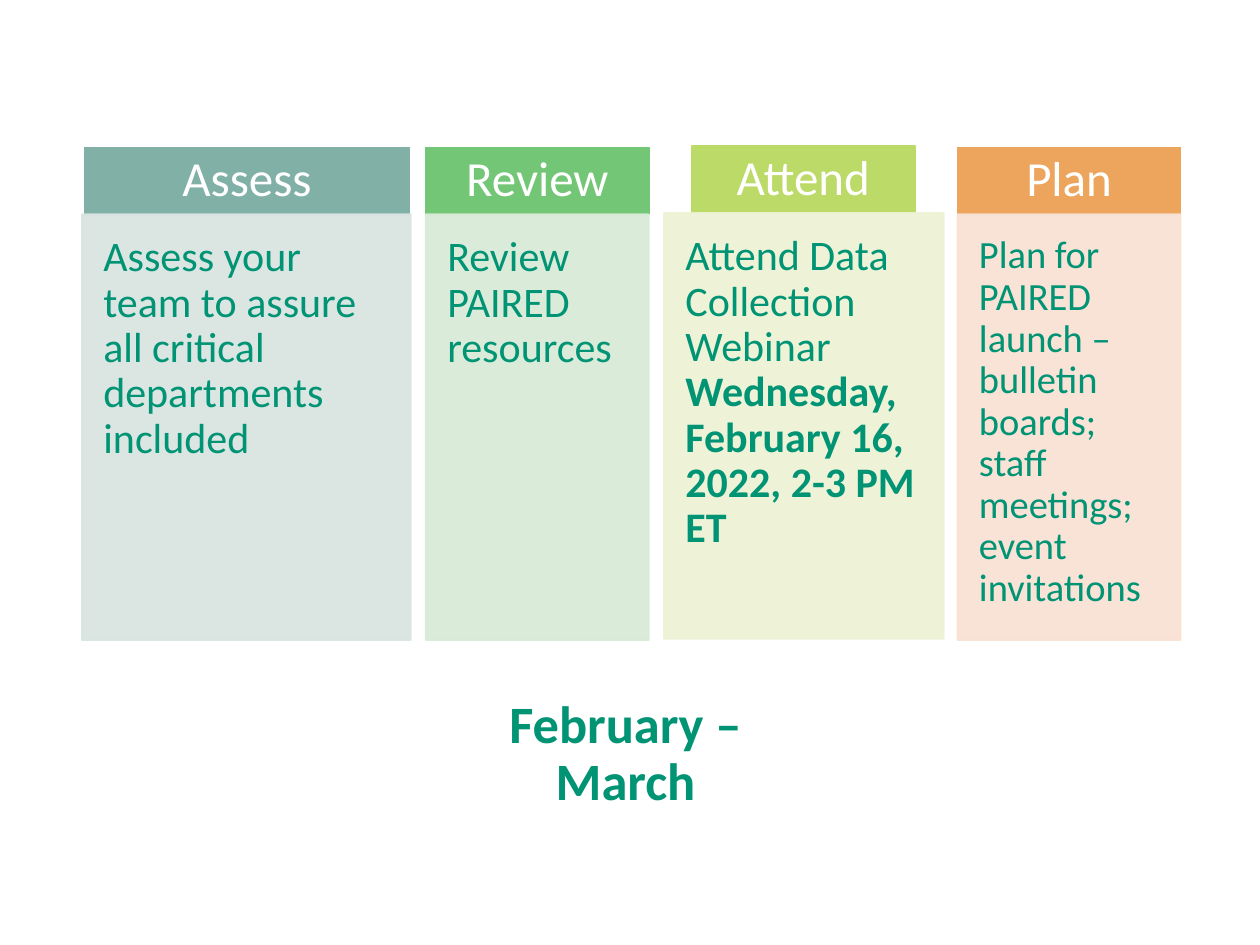
from dataclasses import dataclass

from lxml.etree import SubElement
from pptx import Presentation
from pptx.dml.color import RGBColor
from pptx.enum.shapes import MSO_SHAPE
from pptx.enum.text import MSO_ANCHOR, MSO_AUTO_SIZE, PP_ALIGN
from pptx.oxml.ns import qn
from pptx.slide import Slide
from pptx.util import Inches, Pt

WHITE = RGBColor(0xFF, 0xFF, 0xFF)
GREEN = RGBColor(0x00, 0x93, 0x74)
TEAL, PALE_TEAL = RGBColor(0x80, 0xB0, 0xA6), RGBColor(0xD8, 0xE4, 0xE1)
LEAF, PALE_LEAF = RGBColor(0x73, 0xC6, 0x75), RGBColor(0xD6, 0xEB, 0xD5)
LIME, PALE_LIME = RGBColor(0xBC, 0xDA, 0x67), RGBColor(0xED, 0xF2, 0xD3)
ORANGE, PALE_ORANGE = RGBColor(0xED, 0xA5, 0x5D), RGBColor(0xF8, 0xE1, 0xD2)

COLUMNS, ROWS = 100, 75
HEADING_ROWS, DETAIL_ROWS = 5.3, 33.8

STEPS = [
    dict(heading="Assess", runs=[("Assess your team to assure all critical departments included", False)],
         heading_span=(6.7, 25.8), detail_span=(6.5, 26.1), top=11.7, size=24, colors=(TEAL, PALE_TEAL)),
    dict(heading="Review", runs=[("Review PAIRED resources", False)],
         heading_span=(33.8, 17.7), detail_span=(33.8, 17.7), top=11.7, size=24, colors=(LEAF, PALE_LEAF)),
    dict(heading="Attend", runs=[("Attend Data Collection Webinar ", False),
                                 ("Wednesday, February 16, 2022, 2-3 PM ET", True)],
         heading_span=(54.9, 17.7), detail_span=(52.7, 22.2), top=11.6, size=24, colors=(LIME, PALE_LIME)),
    dict(heading="Plan", runs=[("Plan for PAIRED launch – bulletin boards; staff meetings; event invitations", False)],
         heading_span=(76, 17.7), detail_span=(76, 17.7), top=11.7, size=22, colors=(ORANGE, PALE_ORANGE)),
]


@dataclass
class StepBoard:
    """Draws step columns and their title on a slide grid."""

    slide: Slide
    width: int
    height: int
    font_name: str = "Calibri"

    def place(self, left, top, width, height):
        column, row = self.width / COLUMNS, self.height / ROWS
        return int(left * column), int(top * row), int(width * column), int(height * row)

    def fill_text(self, frame, runs, size, color, align, anchor):
        for name, value in dict(word_wrap=True, auto_size=MSO_AUTO_SIZE.NONE, vertical_anchor=anchor).items():
            setattr(frame, name, value)
        paragraph = frame.paragraphs[0]
        paragraph.alignment = align
        paragraph.line_spacing = 0.9
        for words, bold in runs:
            run = paragraph.add_run()
            run.text = words
            for name, value in dict(name=self.font_name, size=Pt(size), bold=bold).items():
                setattr(run.font, name, value)
            run.font.color.rgb = color

    def title(self, words, area):
        heading = self.slide.shapes.title
        for name, value in zip(("left", "top", "width", "height"), self.place(*area)):
            setattr(heading, name, value)
        self.fill_text(heading.text_frame, [(words, True)], 30, GREEN, PP_ALIGN.CENTER, MSO_ANCHOR.BOTTOM)

    def panel(self, area, fill, inset, opacity=100):
        block = self.slide.shapes.add_shape(MSO_SHAPE.RECTANGLE, *self.place(*area))
        block.shadow.inherit = False
        block.fill.solid()
        block.fill.fore_color.rgb = fill
        block.line.color.rgb = fill
        block.line.width = Pt(1)
        if opacity < 100:
            for color in block.element.spPr.iter(qn("a:srgbClr")):
                SubElement(color, qn("a:alpha"), val=str(opacity * 1000))
        for side in ("left", "top", "right", "bottom"):
            setattr(block.text_frame, f"margin_{side}", Inches(inset))
        return block.text_frame

    def step(self, heading, runs, heading_span, detail_span, top, size, colors):
        strong, pale = colors
        (left, width), (detail_left, detail_width) = heading_span, detail_span
        header = self.panel((left, top, width, HEADING_ROWS), strong, 0.14)
        self.fill_text(header, [(heading, False)], 28, WHITE, PP_ALIGN.CENTER, MSO_ANCHOR.MIDDLE)
        detail = self.panel((detail_left, top + HEADING_ROWS, detail_width, DETAIL_ROWS), pale, 0.17, 90)
        self.fill_text(detail, runs, size, GREEN, PP_ALIGN.LEFT, MSO_ANCHOR.TOP)


def main():
    deck = Presentation()
    deck.slide_width, deck.slide_height = Inches(10), Inches(7.5)
    slide = deck.slides.add_slide(deck.slide_layouts[5])
    board = StepBoard(slide, deck.slide_width, deck.slide_height)
    board.title("February – March", (33.5, 55.9, 32.3, 9))
    for step in STEPS:
        board.step(**step)
    deck.save("out.pptx")


if __name__ == "__main__":
    main()
